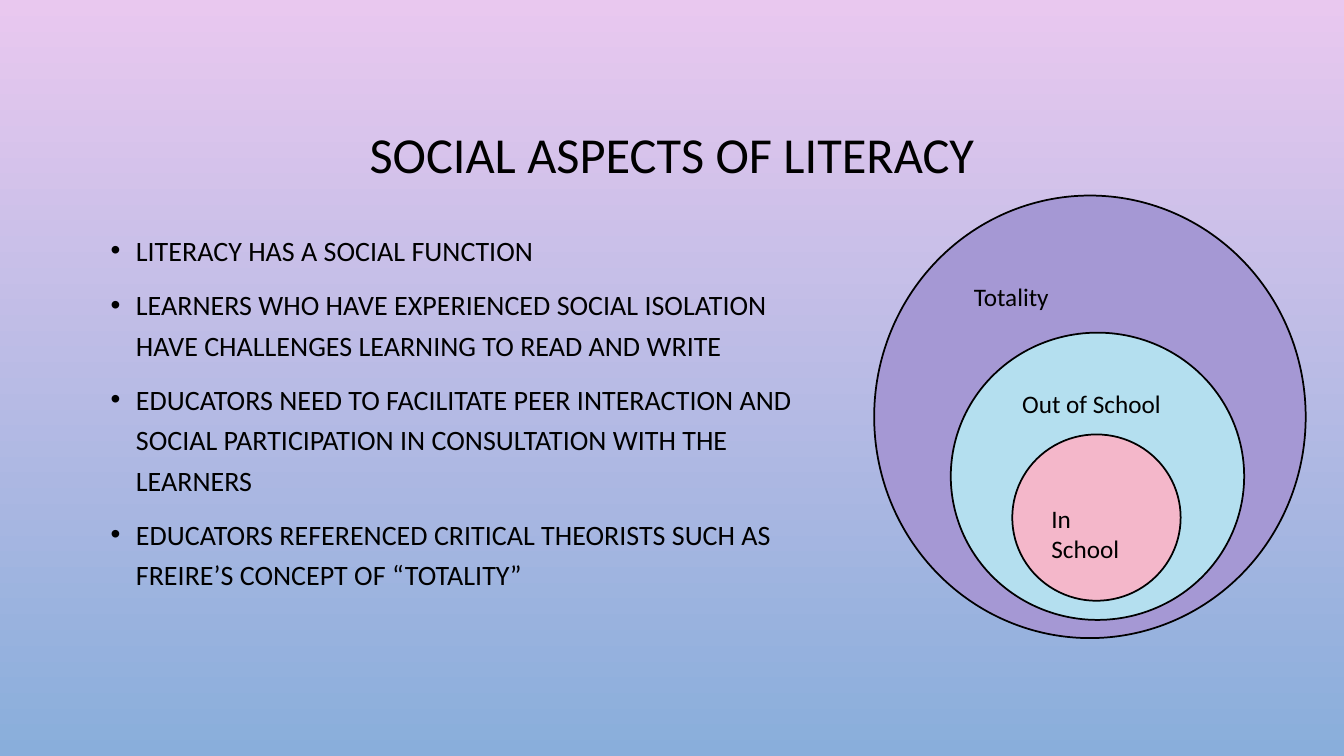
from dataclasses import dataclass

from lxml.etree import SubElement
from pptx import Presentation
from pptx.dml.color import RGBColor
from pptx.enum.shapes import MSO_SHAPE as Preset
from pptx.enum.text import MSO_ANCHOR as Anchor, MSO_AUTO_SIZE as AutoSize, PP_ALIGN as Align
from pptx.oxml.ns import qn
from pptx.util import Inches, Pt


@dataclass(frozen=True)
class Theme:
    font: str = "Calibri"
    ink: str = "000000"
    sky_top: str = "E9C8EF"
    sky_bottom: str = "89AEDB"
    totality: str = "A598D4"
    out_of_school: str = "B4DFEF"
    in_school: str = "F4B7CA"
    title_size: int = 36
    body_size: int = 20
    label_size: int = 18
    outline: float = 1.25


@dataclass(frozen=True)
class Area:
    left: float
    top: float
    width: float
    height: float

    def lengths(self) -> list:
        return [Inches(n) for n in (self.left, self.top, self.width, self.height)]


@dataclass(frozen=True)
class Circle:
    area: Area
    fill: str
    label: str
    label_area: Area


THEME = Theme()
TITLE = "SOCIAL ASPECTS OF LITERACY"
POINTS = [
    "LITERACY HAS A SOCIAL FUNCTION",
    "LEARNERS WHO HAVE EXPERIENCED SOCIAL ISOLATION HAVE CHALLENGES LEARNING TO READ AND WRITE",
    "EDUCATORS NEED TO FACILITATE PEER INTERACTION AND SOCIAL PARTICIPATION "
    "IN CONSULTATION WITH THE LEARNERS",
    "EDUCATORS REFERENCED CRITICAL THEORISTS SUCH AS FREIRE’S CONCEPT OF “TOTALITY”",
]
CIRCLES = [
    Circle(Area(8.67, 1.94, 4.28, 4.39), THEME.totality,
           "Totality", Area(9.56, 2.74, 2.56, 0.4)),
    Circle(Area(9.43, 3.3, 2.91, 2.85), THEME.out_of_school,
           "Out of School", Area(10.04, 3.8, 1.67, 0.4)),
    Circle(Area(10.04, 4.31, 1.67, 1.65), THEME.in_school,
           "In School", Area(10.33, 4.94, 1.07, 0.71)),
]


def color(value: str) -> RGBColor:
    return RGBColor.from_string(value)


def set_all(target, values: dict) -> None:
    for name, value in values.items():
        setattr(target, name, value)


def write(para, text: str, size: int, **layout) -> None:
    set_all(para, layout)
    span = para.add_run()
    span.text = text
    set_all(span.font, {"name": THEME.font, "size": Pt(size)})
    span.font.color.rgb = color(THEME.ink)


def add_bullet(para) -> None:
    props = para._p.get_or_add_pPr()
    set_all_indents = {"marL": Inches(0.25), "indent": Inches(-0.25)}
    for name, value in set_all_indents.items():
        props.set(name, str(value))
    bullet_color = SubElement(props, qn("a:buClr"))
    SubElement(bullet_color, qn("a:srgbClr"), val=THEME.ink)
    SubElement(props, qn("a:buFont"), typeface="Arial")
    SubElement(props, qn("a:buChar"), char="•")


def paint_background(page) -> None:
    fill = page.background.fill
    fill.gradient()
    fill.gradient_angle = 270
    for stop, shade in zip(fill.gradient_stops, (THEME.sky_top, THEME.sky_bottom)):
        stop.color.rgb = color(shade)


def add_title(page) -> None:
    title = page.shapes.title
    set_all(title, dict(zip(("left", "top", "width", "height"),
                            Area(1, 0.68, 11.33, 1.75).lengths())))
    set_all(title.text_frame, {"vertical_anchor": Anchor.MIDDLE, "word_wrap": True})
    write(title.text_frame.paragraphs[0], TITLE, THEME.title_size,
          alignment=Align.CENTER, line_spacing=0.9)


def add_points(page) -> None:
    frame = page.shapes.add_textbox(*Area(1, 2.2, 7.37, 4.13).lengths()).text_frame
    frame.word_wrap = True
    for index, point in enumerate(POINTS):
        para = frame.add_paragraph() if index else frame.paragraphs[0]
        add_bullet(para)
        write(para, point, THEME.body_size, line_spacing=1.2,
              space_before=Pt(10 if index else 0))


def add_circle(page, circle: Circle) -> None:
    shape = page.shapes.add_shape(Preset.OVAL, *circle.area.lengths())
    shape.shadow.inherit = False
    shape.fill.solid()
    shape.fill.fore_color.rgb = color(circle.fill)
    shape.line.color.rgb = color(THEME.ink)
    shape.line.width = Pt(THEME.outline)


def add_label(page, circle: Circle) -> None:
    frame = page.shapes.add_textbox(*circle.label_area.lengths()).text_frame
    set_all(frame, {"word_wrap": True, "auto_size": AutoSize.SHAPE_TO_FIT_TEXT})
    write(frame.paragraphs[0], circle.label, THEME.label_size)


def main() -> None:
    deck = Presentation()
    set_all(deck, {"slide_width": Inches(13.33), "slide_height": Inches(7.5)})
    page = deck.slides.add_slide(deck.slide_layouts.get_by_name("Title Only"))
    paint_background(page)
    add_title(page)
    add_points(page)
    # Nested circles first, so every label stays in front
    for draw in (add_circle, add_label):
        for circle in CIRCLES:
            draw(page, circle)
    deck.save("out.pptx")


if __name__ == "__main__":
    main()
